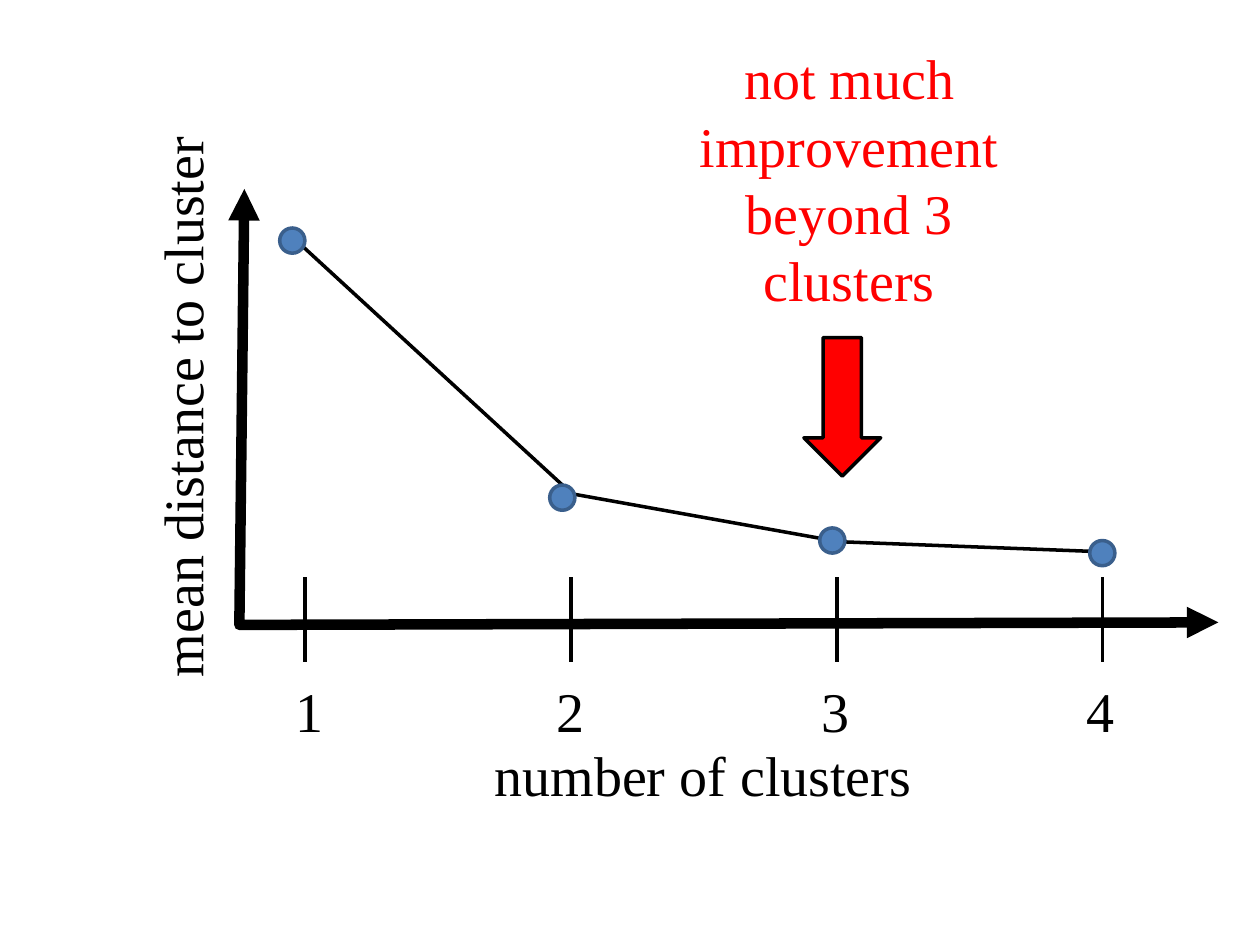
import pptx
import pptx.util
import pptx.dml.color
import pptx.enum.shapes
import pptx.enum.text
import pptx.oxml.ns
import lxml.etree

BLACK = pptx.dml.color.RGBColor(0x00, 0x00, 0x00)
RED = pptx.dml.color.RGBColor(0xFF, 0x00, 0x00)
BLUE = pptx.dml.color.RGBColor(0x4F, 0x81, 0xBD)
DARK_BLUE = pptx.dml.color.RGBColor(0x3A, 0x5F, 0x8C)
SHAPES = pptx.enum.shapes.MSO_SHAPE

presentation = pptx.Presentation()
presentation.slide_width = pptx.util.Inches(10)
presentation.slide_height = pptx.util.Inches(7.5)
slide = presentation.slides.add_slide(presentation.slide_layouts[6])
column = presentation.slide_width / 100
row = presentation.slide_height / 75


def grid(*lengths):
    return [round(length * (row if index % 2 else column)) for index, length in enumerate(lengths)]


def add_text(text, box, color=BLACK, rotation=0):
    shape = slide.shapes.add_textbox(*grid(*box))
    shape.rotation = rotation
    frame = shape.text_frame
    frame.word_wrap = True
    frame.auto_size = pptx.enum.text.MSO_AUTO_SIZE.SHAPE_TO_FIT_TEXT
    paragraph = frame.paragraphs[0]
    paragraph.alignment = pptx.enum.text.PP_ALIGN.CENTER
    run = paragraph.add_run()
    run.text = text
    font_format = {"name": "Times New Roman", "size": pptx.util.Pt(32)}
    for name, value in font_format.items():
        setattr(run.font, name, value)
    run.font.color.rgb = color


curve = [(23.2, 18.8), (45.4, 39.2), (66.6, 43), (87.6, 43.8)]
axes = [(19.4, 15), (19, 49.6), (96.7, 49.4)]
for points, width, ends in [(curve, 2, []), (axes, 6, ["a:headEnd", "a:tailEnd"])]:
    corners = [grid(*point) for point in points]
    builder = slide.shapes.build_freeform(*corners[0])
    builder.add_line_segments(corners[1:], close=False)
    shape = builder.convert_to_shape()
    shape.shadow.inherit = False
    shape.fill.background()
    shape.line.color.rgb = BLACK
    shape.line.width = pptx.util.Pt(width)
    for end in ends:
        line = shape.line._get_or_add_ln()
        lxml.etree.SubElement(line, pptx.oxml.ns.qn(end), type="triangle")

add_text("number of clusters", (31.7, 58.3, 48.2, 6.4))
add_text("mean distance to cluster", (-9.7, 29.1, 48.2, 6.4), rotation=270)

tick_left, tick_gap = 24.2, 21.1
for index, label_left in enumerate([21.5, 42.2, 63.3, 84.3]):
    tick = tick_left + index * tick_gap
    connector = slide.shapes.add_connector(
        pptx.enum.shapes.MSO_CONNECTOR.STRAIGHT, *grid(tick, 45.8, tick, 52.5))
    connector.line.color.rgb = BLACK
    connector.line.width = pptx.util.Pt(2.25)
    lxml.etree.SubElement(connector._element.spPr, pptx.oxml.ns.qn("a:effectLst"))
    add_text(str(index + 1), (label_left, 53.2, 6.1, 6.4))

marker_size = 2
marker_tops = [18.1, 38.5, 41.9, 42.9]
figures = [
    (SHAPES.OVAL, (22.2 + index * 21.43, top, marker_size, marker_size), BLUE, DARK_BLUE)
    for index, top in enumerate(marker_tops)
]
figures.append((SHAPES.DOWN_ARROW, (63.8, 26.8, 6.1, 11), RED, BLACK))
for kind, box, fill_color, line_color in figures:
    shape = slide.shapes.add_shape(kind, *grid(*box))
    shape.shadow.inherit = False
    shape.fill.solid()
    shape.fill.fore_color.rgb = fill_color
    shape.line.color.rgb = line_color
    shape.line.width = pptx.util.Pt(2)

add_text("not much improvement beyond 3 clusters", (51.6, 3, 31.6, 22.6), RED)

presentation.save("out.pptx")
